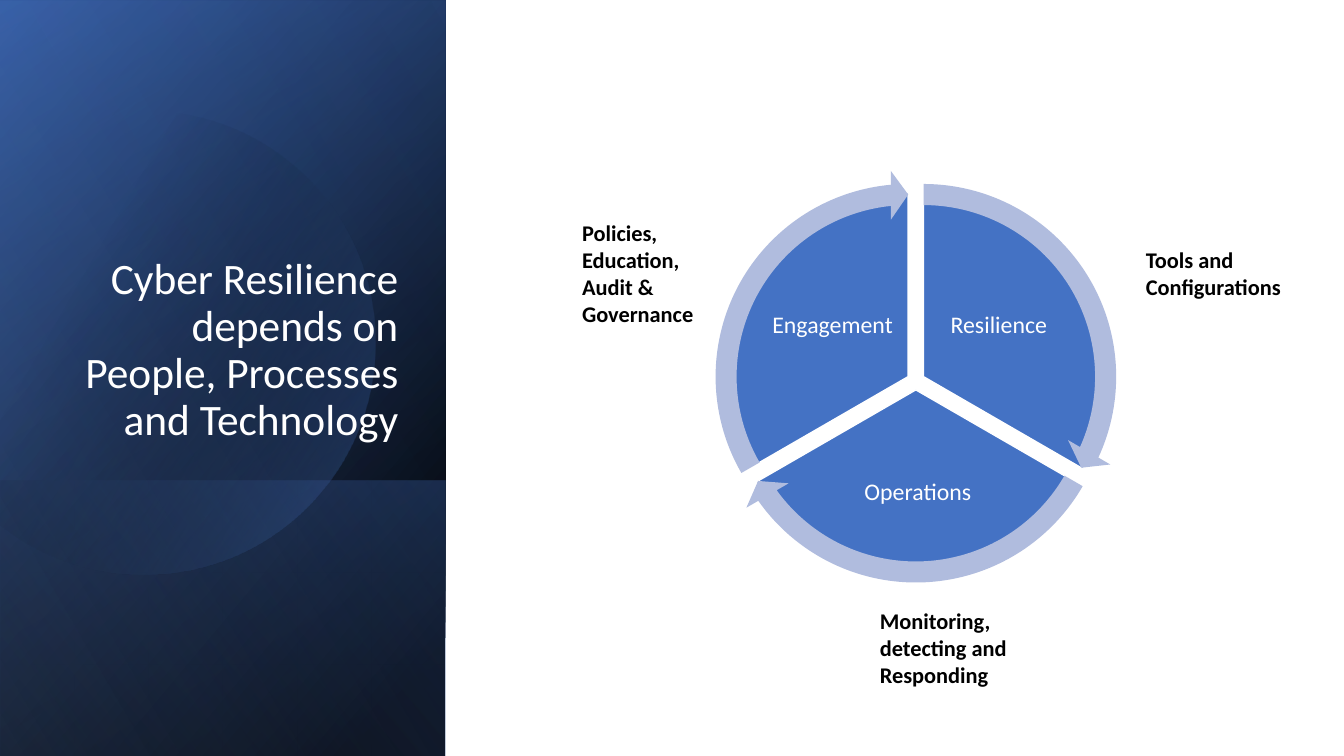
import math
from dataclasses import dataclass

from pptx import Presentation
from pptx import oxml
from pptx import util as u
from pptx.dml.color import RGBColor
from pptx.enum import shapes, text
from pptx.oxml import ns

WHITE = RGBColor(0xFF, 0xFF, 0xFF)
BLACK = RGBColor(0x00, 0x00, 0x00)
BLUE = RGBColor(0x44, 0x72, 0xC4)
DARK_BLUE = RGBColor(0x2F, 0x55, 0x97)
PALE_BLUE = RGBColor(0x8F, 0xAA, 0xDC)
ARROW_BLUE = RGBColor(0xB0, 0xBC, 0xDE)
FONT = "Calibri"
WHEEL_CENTER = (654.2, 272.2)
SLICE_OFFSET = 6.3
PIE_SIZE = 263
ARROW_SIZE = 295
ANGLE_UNIT = 0.6
HEAD_ANGLE = 3.275
GLOW_CENTER = (102.5, 244.5)
GLOW_RADIUS = 165.5
GLOW_ANGLES = (-133, -90, 0, 90, 133)


@dataclass
class Box:
    left: float
    top: float
    width: float
    height: float

    def lengths(self) -> tuple:
        return tuple(u.Pt(v) for v in (self.left, self.top, self.width, self.height))


@dataclass
class Stop:
    position: int
    color: RGBColor
    opacity: int = 100


@dataclass
class Panel:
    box: Box
    stops: tuple
    angle: int


@dataclass
class Slice:
    label: str
    label_box: Box
    start: int
    end: int
    bisector: int


@dataclass
class Caption:
    words: str
    box: Box


SIDE = Box(-110.9, 111, 540, 318.2)
PANELS = [
    Panel(SIDE, (Stop(8, BLACK), Stop(100, DARK_BLUE)), 50),
    Panel(SIDE, (Stop(0, BLACK, 0), Stop(99, BLUE, 46)), 30),
    Panel(Box(60.5, 282.6, 197.3, 318.2), (Stop(2, BLUE, 29), Stop(100, BLACK, 30)), 130),
]
GLOW_STOPS = (Stop(29, BLACK, 0), Stop(100, BLUE, 43))
SHEEN = Panel(SIDE, (Stop(0, BLACK, 0), Stop(99, PALE_BLUE, 11)), 120)
SLICES = [
    Slice("Resilience", Box(666.7, 193.7, 93.6, 78.5), 270, 30, -30),
    Slice("Operations", Box(585.4, 317.5, 140.4, 69.1), 30, 150, 90),
    Slice("Engagement", Box(547.9, 193.7, 93.6, 78.5), 150, 270, 210),
]
CAPTIONS = [
    Caption("Tools and Configurations", Box(811.4, 172.1, 128.2, 46.1)),
    Caption("Monitoring, detecting and Responding", Box(621.4, 430.2, 110.2, 65.5)),
    Caption("Policies, Education, Audit & Governance", Box(408.7, 153, 102.2, 85)),
]


def fill_gradient(shape, stops: tuple, angle: int) -> None:
    shape.shadow.inherit = False
    shape.line.fill.background()
    shape.fill.background()
    marks = "".join(
        f'<a:gs pos="{stop.position * 1000}"><a:srgbClr val="{stop.color}">'
        f'<a:alpha val="{stop.opacity * 1000}"/></a:srgbClr></a:gs>'
        for stop in stops
    )
    gradient = oxml.parse_xml(
        f'<a:gradFill {ns.nsdecls("a")} rotWithShape="1"><a:gsLst>{marks}</a:gsLst>'
        f'<a:lin ang="{angle * 60000}" scaled="0"/></a:gradFill>'
    )
    properties = shape._element.spPr
    properties.replace(properties.find(ns.qn("a:noFill")), gradient)


def draw_panel(slide, panel: Panel) -> None:
    shape = slide.shapes.add_shape(shapes.MSO_SHAPE.RECTANGLE, *panel.box.lengths())
    shape.rotation = 90
    shape._element.spPr.find(ns.qn("a:xfrm")).set("flipH", "1")
    fill_gradient(shape, panel.stops, panel.angle)


def glow_point(degree: float, tangent: float = 0) -> tuple:
    cosine, sine = math.cos(math.radians(degree)), math.sin(math.radians(degree))
    return (
        u.Pt(GLOW_CENTER[0] + GLOW_RADIUS * (cosine - tangent * sine)),
        u.Pt(GLOW_CENTER[1] + GLOW_RADIUS * (sine + tangent * cosine)),
    )


def draw_glow(slide) -> None:
    points = [glow_point(degree) for degree in GLOW_ANGLES]
    builder = slide.shapes.build_freeform(*points[0])
    builder.add_line_segments(points[1:], close=True)
    shape = builder.convert_to_shape()
    sides = list(shape._element.spPr.iter(ns.qn("a:lnTo")))
    for side, start, end in zip(sides, GLOW_ANGLES, GLOW_ANGLES[1:]):
        reach = 4 / 3 * math.tan(math.radians(end - start) / 4)
        controls = (glow_point(start, reach), glow_point(end, -reach), glow_point(end))
        marks = "".join(
            f'<a:pt x="{x - shape.left}" y="{y - shape.top}"/>' for x, y in controls
        )
        curve = oxml.parse_xml(f'<a:cubicBezTo {ns.nsdecls("a")}>{marks}</a:cubicBezTo>')
        side.getparent().replace(side, curve)
    fill_gradient(shape, GLOW_STOPS, 30)


def add_round(group, kind, piece: Slice, size: float, color: RGBColor, adjustments: list):
    bisector = math.radians(piece.bisector)
    left = WHEEL_CENTER[0] + SLICE_OFFSET * math.cos(bisector) - size / 2
    top = WHEEL_CENTER[1] + SLICE_OFFSET * math.sin(bisector) - size / 2
    shape = group.shapes.add_shape(kind, *Box(left, top, size, size).lengths())
    shape.shadow.inherit = False
    shape.fill.solid()
    shape.fill.fore_color.rgb = color
    shape.line.fill.background()
    for index, value in enumerate(adjustments):
        shape.adjustments[index] = value
    return shape


def draw_slice(group, piece: Slice) -> None:
    angles = [piece.start * ANGLE_UNIT, piece.end * ANGLE_UNIT]
    pie = add_round(group, shapes.MSO_SHAPE.PIE, piece, PIE_SIZE, BLUE, angles)
    pie.line.color.rgb = WHITE
    pie.line.width = u.Pt(1)
    frame = group.shapes.add_textbox(*piece.label_box.lengths()).text_frame
    frame.margin_left = frame.margin_right = u.Pt(1.5)
    frame.margin_top = frame.margin_bottom = u.Pt(1.5)
    frame.vertical_anchor = text.MSO_ANCHOR.MIDDLE
    write(frame, piece.label, 17, WHITE, text.PP_ALIGN.CENTER, 0.9)


def draw_arrow(group, piece: Slice) -> None:
    adjustments = [0.051, HEAD_ANGLE, piece.end * ANGLE_UNIT - HEAD_ANGLE,
                   piece.start * ANGLE_UNIT, 0.059]
    add_round(group, shapes.MSO_SHAPE.CIRCULAR_ARROW, piece, ARROW_SIZE, ARROW_BLUE, adjustments)


def write(frame, words: str, size: float, color: RGBColor, alignment, spacing: float):
    frame.word_wrap = True
    frame.text = words
    paragraph = frame.paragraphs[0]
    paragraph.alignment = alignment
    paragraph.line_spacing = spacing
    paragraph.font.name = FONT
    paragraph.font.size = u.Pt(size)
    paragraph.font.color.rgb = color
    return paragraph


def draw_title(slide) -> None:
    title = slide.shapes.title
    title.left, title.top, title.width, title.height = Box(46.1, 132.5, 245.5, 188.6).lengths()
    frame = title.text_frame
    frame.auto_size = text.MSO_AUTO_SIZE.NONE
    frame.vertical_anchor = text.MSO_ANCHOR.BOTTOM
    write(frame, "Cyber Resilience depends on People, Processes and Technology",
          31, WHITE, text.PP_ALIGN.RIGHT, 0.9)
    title._element.getparent().append(title._element)


def draw_caption(slide, caption: Caption) -> None:
    frame = slide.shapes.add_textbox(*caption.box.lengths()).text_frame
    frame.auto_size = text.MSO_AUTO_SIZE.SHAPE_TO_FIT_TEXT
    paragraph = write(frame, caption.words, 16, BLACK, text.PP_ALIGN.LEFT, 1.0)
    paragraph.space_after = u.Pt(5.6)
    paragraph.font.bold = True


def main() -> None:
    presentation = Presentation()
    presentation.slide_width = u.Pt(960)
    presentation.slide_height = u.Pt(540)
    slide = presentation.slides.add_slide(presentation.slide_layouts[5])
    for panel in PANELS:
        draw_panel(slide, panel)
    draw_glow(slide)
    draw_panel(slide, SHEEN)
    draw_title(slide)
    wheel = slide.shapes.add_group_shape()
    for piece in SLICES:
        draw_slice(wheel, piece)
    for piece in SLICES:
        draw_arrow(wheel, piece)
    for caption in CAPTIONS:
        draw_caption(slide, caption)
    presentation.save("out.pptx")


if __name__ == "__main__":
    main()
